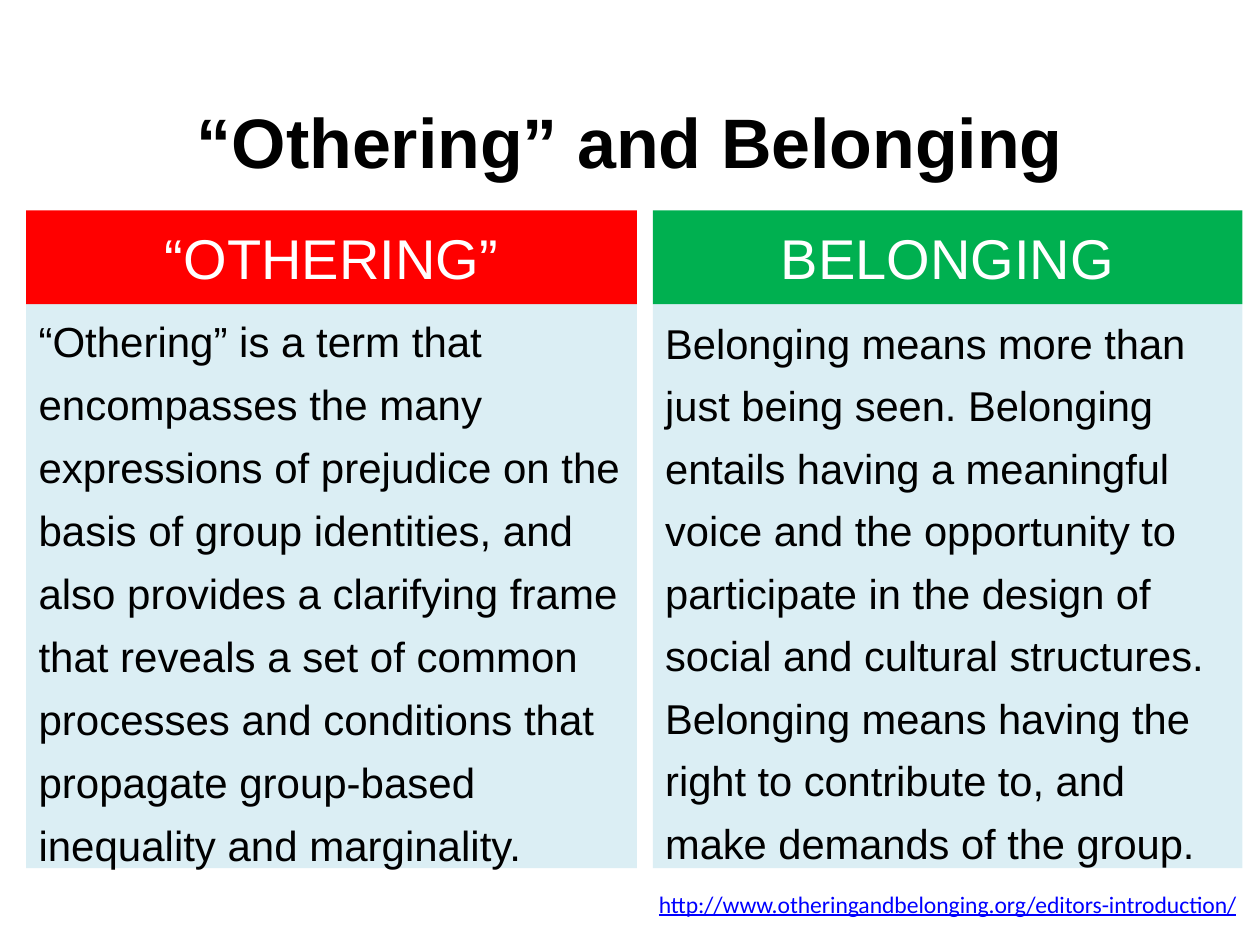
from pptx import Presentation
from pptx.dml.color import RGBColor
from pptx.enum.shapes import MSO_SHAPE
from pptx.enum.text import MSO_ANCHOR, PP_ALIGN
from pptx.util import Pt

BLACK = RGBColor(0x00, 0x00, 0x00)
WHITE = RGBColor(0xFF, 0xFF, 0xFF)
RED = RGBColor(0xFF, 0x00, 0x00)
GREEN = RGBColor(0x00, 0xB0, 0x50)
PALE_BLUE = RGBColor(0xDB, 0xEE, 0xF4)
LINK_BLUE = RGBColor(0x00, 0x00, 0xFF)

# Content
TITLE = "“Othering” and Belonging"
SOURCE = "http://www.otheringandbelonging.org/editors-introduction/"
COLUMNS = [
    dict(heading="“OTHERING”", color=RED, left=15, width=349, size=24,
         body="“Othering” is a term that encompasses the many expressions of "
              "prejudice on the basis of group identities, and also provides a "
              "clarifying frame that reveals a set of common processes and "
              "conditions that propagate group-based inequality and marginality."),
    dict(heading="BELONGING", color=GREEN, left=373, width=337, size=23.8,
         body="Belonging means more than just being seen. Belonging entails "
              "having a meaningful voice and the opportunity to participate in "
              "the design of social and cultural structures. Belonging means "
              "having the right to contribute to, and make demands of the group."),
]

# Vertical layout, in points
HEADING_TOP, BODY_TOP, BODY_BOTTOM = 120.2, 173.8, 496.1

presentation = Presentation()
presentation.slide_width, presentation.slide_height = Pt(720), Pt(540)
slide = presentation.slides.add_slide(presentation.slide_layouts[6])


def add_text(text, left, top, width, height, *, size, fill=None, color=BLACK,
             font="Arial", bold=False, underline=False, align=PP_ALIGN.LEFT,
             anchor=MSO_ANCHOR.MIDDLE, line_spacing=1.0, wrap=True):
    """Add a text box, or a filled rectangle when a fill is given."""
    area = [Pt(length) for length in (left, top, width, height)]
    if fill is None:
        box = slide.shapes.add_textbox(*area)
    else:
        box = slide.shapes.add_shape(MSO_SHAPE.RECTANGLE, *area)
        box.shadow.inherit = False
        box.fill.solid()
        box.fill.fore_color.rgb = fill
        box.line.fill.background()
    frame = box.text_frame
    frame.word_wrap = wrap
    frame.vertical_anchor = anchor
    paragraph = frame.paragraphs[0]
    paragraph.alignment = align
    paragraph.line_spacing = line_spacing
    run = paragraph.add_run()
    run.text = text
    run.font.name = font
    run.font.size = Pt(size)
    run.font.bold = bold
    run.font.underline = underline
    run.font.color.rgb = color


# Title
add_text(TITLE, 36, 35.3, 648, 90, size=40, bold=True, align=PP_ALIGN.CENTER)

# Two columns: coloured heading above a pale body
for column in COLUMNS:
    left, width = column["left"], column["width"]
    add_text(column["body"], left, BODY_TOP, width, BODY_BOTTOM - BODY_TOP,
             size=column["size"], fill=PALE_BLUE, line_spacing=1.25)
    add_text(column["heading"], left, HEADING_TOP, width, BODY_TOP - HEADING_TOP,
             size=32, fill=column["color"], color=WHITE, align=PP_ALIGN.CENTER)

# Source address
add_text(SOURCE, 369.4, 504.7, 350.6, 23.8, size=13.5, font="Calibri",
         color=LINK_BLUE, underline=True, anchor=MSO_ANCHOR.TOP, wrap=False)

presentation.save("out.pptx")
